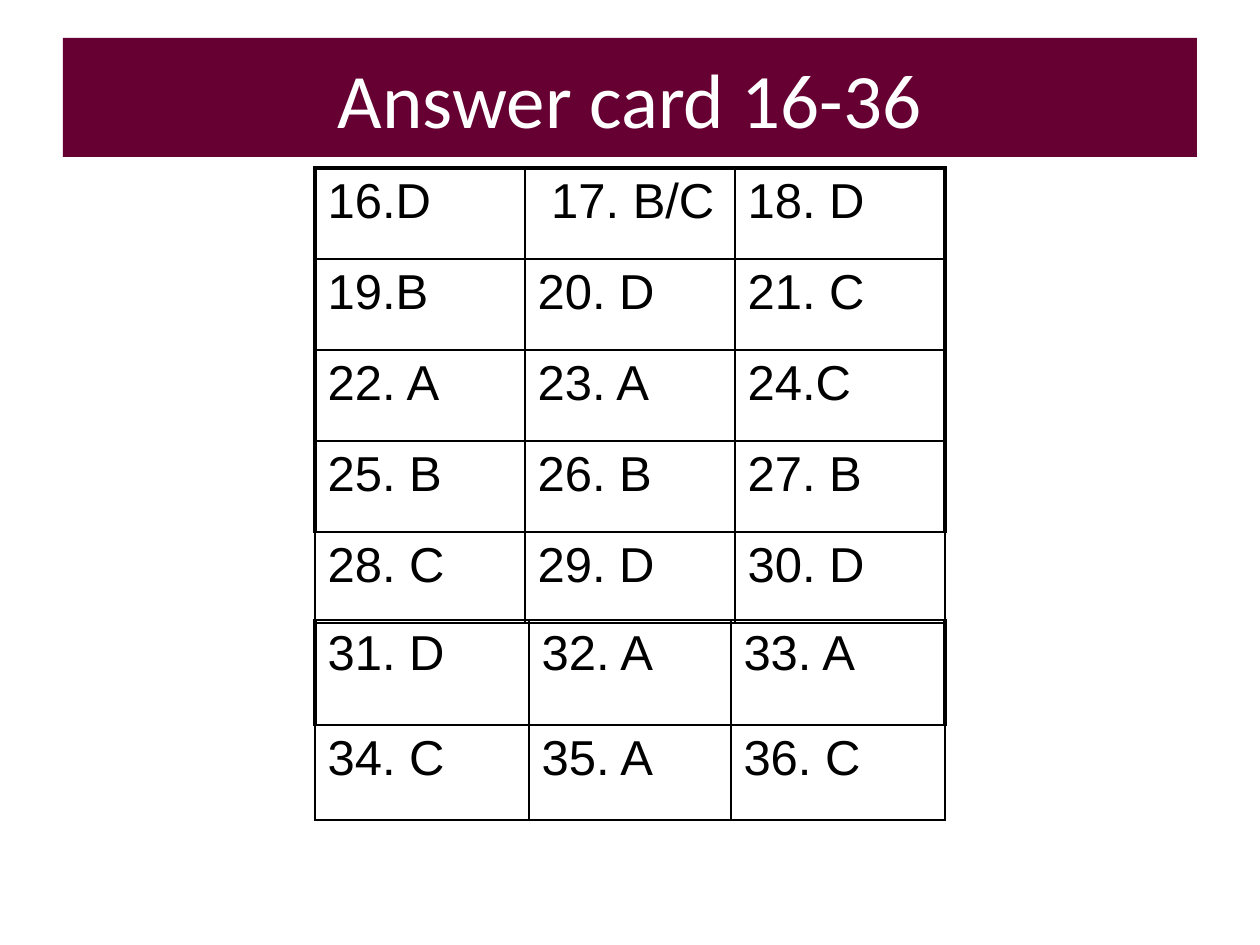
from lxml.etree import SubElement
from pptx import Presentation
from pptx.dml.color import RGBColor
from pptx.enum.shapes import MSO_SHAPE
from pptx.enum.text import MSO_ANCHOR, PP_ALIGN
from pptx.oxml.ns import qn
from pptx.util import Emu, Pt

TITLE = "Answer card 16-36"
GRIDS = [
    {
        "top": 168, "cols": [210] * 3, "rows": [91] * 5, "lid": True, "bold": 4,
        "text": [
            ["16.D", " 17. B/C", "18. D"],
            ["19.B", "20. D", "21. C"],
            ["22. A", "23. A", "24.C"],
            ["25. B", "26. B", "27. B"],
            ["28. C", "29. D", "30. D"],
        ],
    },
    {
        "top": 620, "cols": [214, 202, 214], "rows": [105, 95], "lid": False, "bold": 1,
        "text": [
            ["31. D", "32. A", "33. A"],
            ["34. C", "35. A", "36. C"],
        ],
    },
]
LEFT = 315
THIN, THICK = 1, 2.25


def px(n):
    return Emu(round(n * 914400 / 126))


def tint(code):
    return RGBColor.from_string(code)


def write(frame, text, font="Arial", size=28, color="000000", align=PP_ALIGN.LEFT):
    para = frame.paragraphs[0]
    para.alignment = align
    run = para.add_run()
    run.text = text
    run.font.name = font
    run.font.size = Pt(size)
    run.font.color.rgb = tint(color)


def edge(cell, side, width, color="000000"):
    props = cell._tc.get_or_add_tcPr()
    line = SubElement(props, qn("a:ln" + side), w=str(Pt(width)))
    fill = SubElement(line, qn("a:solidFill"))
    SubElement(fill, qn("a:srgbClr"), val=color)


def grid(slide, data):
    cols, rows, text = data["cols"], data["rows"], data["text"]
    frame = slide.shapes.add_table(
        len(rows), len(cols), px(LEFT), px(data["top"]), px(sum(cols)), px(sum(rows)))
    table = frame.table
    table.first_row = table.horz_banding = False
    for col, wide in zip(table.columns, cols):
        col.width = px(wide)
    for row, high in zip(table.rows, rows):
        row.height = px(high)
    for r, line in enumerate(text):
        for c, word in enumerate(line):
            cell = table.cell(r, c)
            write(cell.text_frame, word)
            side = r < data["bold"]
            heavy = {
                "L": side and c == 0,
                "R": side and c == len(cols) - 1,
                "T": data["lid"] and r == 0,
                "B": False,
            }
            for key, thick in heavy.items():
                edge(cell, key, THICK if thick else THIN)
            cell.fill.background()


def main():
    deck = Presentation()
    deck.slide_width, deck.slide_height = px(1260), px(945)
    slide = deck.slides.add_slide(deck.slide_layouts[6])
    bar = slide.shapes.add_shape(MSO_SHAPE.RECTANGLE, px(63), px(38), px(1134), px(119))
    bar.shadow.inherit = False
    bar.fill.solid()
    bar.fill.fore_color.rgb = tint("660033")
    bar.line.fill.background()
    bar.text_frame.word_wrap = True
    bar.text_frame.vertical_anchor = MSO_ANCHOR.MIDDLE
    write(bar.text_frame, TITLE, font="Calibri", size=44, color="FFFFFF",
          align=PP_ALIGN.CENTER)
    for data in GRIDS:
        grid(slide, data)
    deck.save("out.pptx")


if __name__ == "__main__":
    main()
